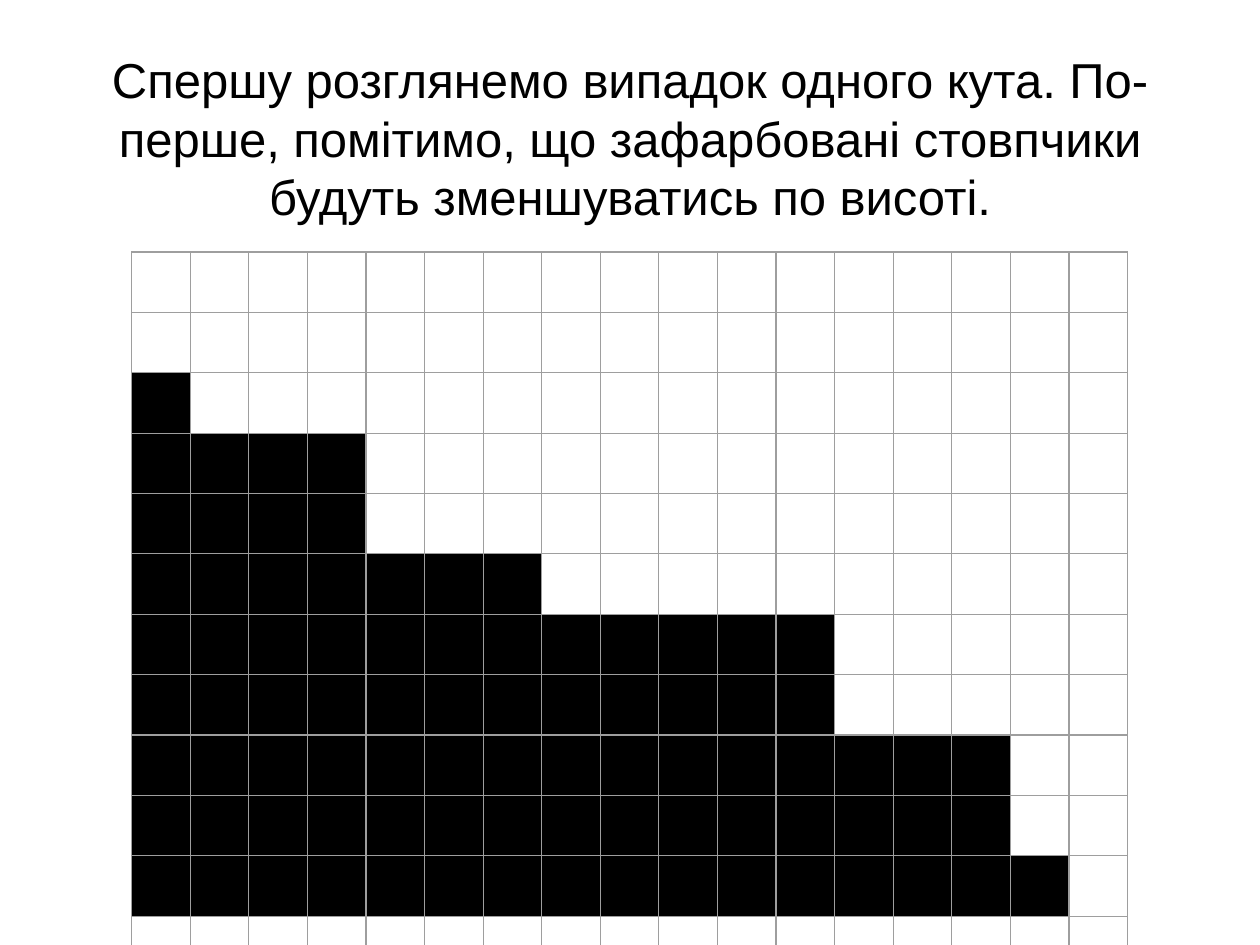
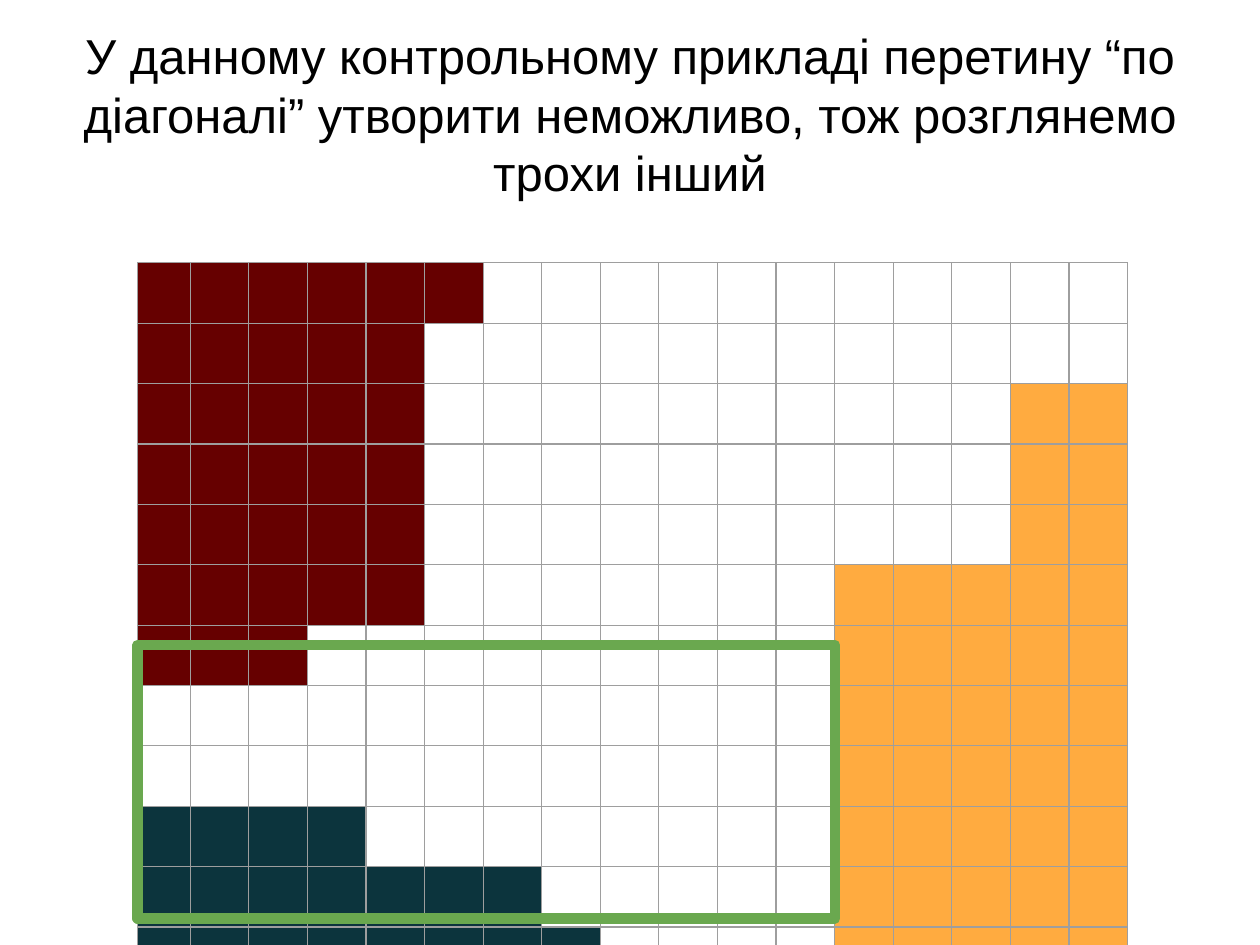
from pptx import Presentation
from pptx.dml.color import RGBColor
from pptx.enum.shapes import MSO_SHAPE as Shape
from pptx.enum.text import MSO_ANCHOR as Anchor, PP_ALIGN as Align
from pptx.oxml.ns import qn
from pptx.util import Pt
from lxml.etree import SubElement

COLORS = {
    "text": "000000",
    "empty": "FFFFFF",
    "black": "000000",
    "red": "660000",
    "teal": "0C343D",
    "orange": "FFAB40",
    "grid": "9E9E9E",
    "frame": "6AA84F",
}
FONT = "Arial"
ROWS, COLUMNS = 12, 17
CELL_WIDTH, CELL_HEIGHT = 33.5, 34.5
GRID_RIGHT = 644.7
BORDERS = ("a:lnL", "a:lnR", "a:lnT", "a:lnB")


def rgb(name):
    return RGBColor.from_string(COLORS[name])


def add_title(page, top, text):
    box = page.shapes.add_textbox(Pt(24.5), Pt(top), Pt(671), Pt(49.7))
    frame = box.text_frame
    frame.word_wrap = True
    frame.vertical_anchor = Anchor.TOP
    frame.margin_left = frame.margin_right = Pt(7.2)
    frame.margin_top = frame.margin_bottom = Pt(7.2)
    para = frame.paragraphs[0]
    para.text = text
    para.alignment = Align.CENTER
    para.font.name = FONT
    para.font.size = Pt(28)
    para.font.color.rgb = rgb("text")


def outline_cell(cell):
    """Put the thin grid line on all four sides, ahead of the cell's fill."""
    properties = cell._tc.get_or_add_tcPr()
    for position, side in enumerate(BORDERS):
        line = SubElement(properties, qn(side), w=str(Pt(0.75)))
        fill = SubElement(line, qn("a:solidFill"))
        SubElement(fill, qn("a:srgbClr"), val=COLORS["grid"])
        properties.insert(position, line)


def add_grid(page, left, top, color_at):
    """Draw the board; the first column takes up what is left of the width."""
    width = GRID_RIGHT - left
    table = page.shapes.add_table(
        ROWS, COLUMNS, Pt(left), Pt(top), Pt(width), Pt(ROWS * CELL_HEIGHT)
    ).table
    table.first_row = table.horz_banding = False
    for column in table.columns:
        column.width = Pt(CELL_WIDTH)
    table.columns[0].width = Pt(width - (COLUMNS - 1) * CELL_WIDTH)
    for row_index, row in enumerate(table.rows):
        row.height = Pt(CELL_HEIGHT)
        for column_index, cell in enumerate(row.cells):
            cell.fill.solid()
            cell.fill.fore_color.rgb = rgb(color_at(row_index, column_index))
            outline_cell(cell)


def add_frame(page, left, top, width, height):
    frame = page.shapes.add_shape(
        Shape.RECTANGLE, Pt(left), Pt(top), Pt(width), Pt(height)
    )
    frame.shadow.inherit = False
    frame.fill.background()
    frame.line.color.rgb = rgb("frame")
    frame.line.width = Pt(6)
    SubElement(frame.line._get_or_add_ln(), qn("a:round"))


def one_corner_page(page):
    filled = [0, 0, 1, 4, 4, 7, 12, 12, 15, 15, 16, 0]

    def color_at(row, column):
        return "black" if column < filled[row] else "empty"

    add_title(
        page, 20.9,
        "Спершу розглянемо випадок одного кута. По-перше, помітимо, що "
        "зафарбовані стовпчики будуть зменшуватись по висоті.",
    )
    add_grid(page, 75.2, 144, color_at)


def three_corners_page(page):
    from_left = [6, 5, 5, 5, 5, 5, 3, 0, 0, 4, 7, 8]
    from_right = [0] * 2 + [2] * 3 + [5] * 7
    first_teal_row = 9
    left, top = 78.7, 150.2

    def color_at(row, column):
        if column < from_left[row]:
            return "teal" if row >= first_teal_row else "red"
        return "orange" if column >= COLUMNS - from_right[row] else "empty"

    add_title(
        page, 7.2,
        "У данному контрольному прикладі перетину “по діагоналі” утворити "
        "неможливо, тож розглянемо трохи інший",
    )
    add_grid(page, left, top, color_at)
    add_frame(page, left, top + 218.4, GRID_RIGHT - left - 5 * CELL_WIDTH, 156.2)


def main():
    deck = Presentation()
    deck.slide_width, deck.slide_height = Pt(720), Pt(540)
    blank = deck.slide_layouts[6]
    for build in (one_corner_page, three_corners_page):
        build(deck.slides.add_slide(blank))
    deck.save("out.pptx")


if __name__ == "__main__":
    main()
